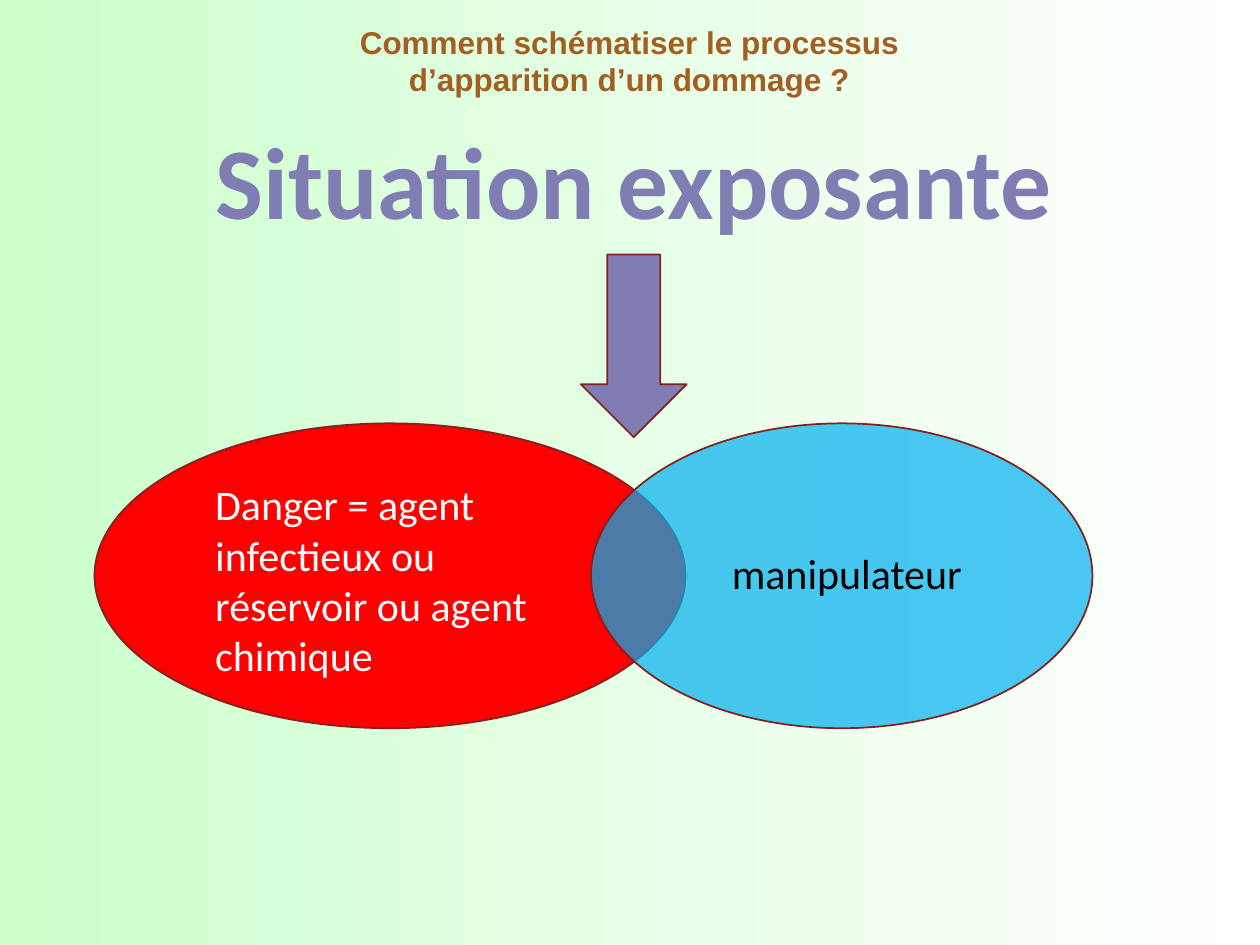
import pptx
import pptx.util
import pptx.dml.color
import pptx.enum.shapes
import pptx.enum.text
import pptx.oxml
import pptx.oxml.ns

Inches = pptx.util.Inches
Pt = pptx.util.Pt
RGBColor = pptx.dml.color.RGBColor
SHAPE = pptx.enum.shapes.MSO_SHAPE
ALIGN = pptx.enum.text.PP_ALIGN
ANCHOR = pptx.enum.text.MSO_ANCHOR

MINT = RGBColor(0xCC, 0xFF, 0xCC)
WHITE = RGBColor(0xFF, 0xFF, 0xFF)
BLACK = RGBColor(0, 0, 0)
VIOLET = RGBColor(0x7F, 0x7D, 0xB1)
RED = RGBColor(0xFF, 0, 0)
BLUE = RGBColor(0, 0xB0, 0xF0)
BROWN = RGBColor(0xA3, 0x5E, 0x21)
MAROON = RGBColor(0x80, 0x22, 0x1D)

BACKGROUND = [(0, MINT), (1, WHITE)]

SHAPES = [
    (SHAPE.OVAL, (0.75, 3.36, 4.69, 2.42), RED, 100),
    (SHAPE.OVAL, (4.69, 3.36, 3.98, 2.42), BLUE, 70),
    (SHAPE.DOWN_ARROW, (4.61, 2.02, 0.84, 1.45), VIOLET, 100),
]

BODY = {"name": "Calibri", "size": Pt(24), "bold": False}
TEXTS = [
    ("Situation exposante", (0.78, 0.86, 8.5, 1.09), ALIGN.CENTER, ANCHOR.BOTTOM,
     {"name": "Calibri", "size": Pt(58), "bold": True}, VIOLET),
    ("Danger = agent infectieux ou réservoir ou agent chimique",
     (1.61, 3.75, 2.97, 1.72), ALIGN.LEFT, ANCHOR.TOP, BODY, WHITE),
    ("manipulateur", (5.71, 4.3, 2.28, 0.5), ALIGN.LEFT, ANCHOR.TOP, BODY, BLACK),
    ("Comment schématiser le processus d’apparition d’un dommage ?",
     (2.32, 0.13, 5.35, 0.71), ALIGN.CENTER, ANCHOR.TOP,
     {"name": "Arial", "size": Pt(18), "bold": True}, BROWN),
]


def paint_background(page):
    fill = page.background.fill
    fill.gradient()
    fill.gradient_angle = 0
    for stop, (position, color) in zip(fill.gradient_stops, BACKGROUND):
        stop.position = position
        stop.color.rgb = color


def add_figure(page, kind, place, color, opacity):
    shape = page.shapes.add_shape(kind, *map(Inches, place))
    shape.shadow.inherit = False
    shape.fill.solid()
    shape.fill.fore_color.rgb = color
    shape.line.color.rgb = MAROON
    shape.line.width = Pt(1)
    if opacity < 100:
        tint = shape.fill._xPr.find(".//" + pptx.oxml.ns.qn("a:srgbClr"))
        alpha = pptx.oxml.parse_xml(
            f'<a:alpha {pptx.oxml.ns.nsdecls("a")} val="{opacity * 1000}"/>')
        tint.append(alpha)


def add_text(page, text, place, align, anchor, font, color):
    box = page.shapes.add_textbox(*map(Inches, place))
    box.text_frame.word_wrap = True
    box.text_frame.vertical_anchor = anchor
    para = box.text_frame.paragraphs[0]
    para.alignment = align
    span = para.add_run()
    span.text = text
    for key, value in font.items():
        setattr(span.font, key, value)
    span.font.color.rgb = color


def main():
    deck = pptx.Presentation()
    deck.slide_width, deck.slide_height = Inches(10), Inches(7.5)
    page = deck.slides.add_slide(deck.slide_layouts[6])
    paint_background(page)
    for figure in SHAPES:
        add_figure(page, *figure)
    for entry in TEXTS:
        add_text(page, *entry)
    deck.save("out.pptx")


if __name__ == "__main__":
    main()
